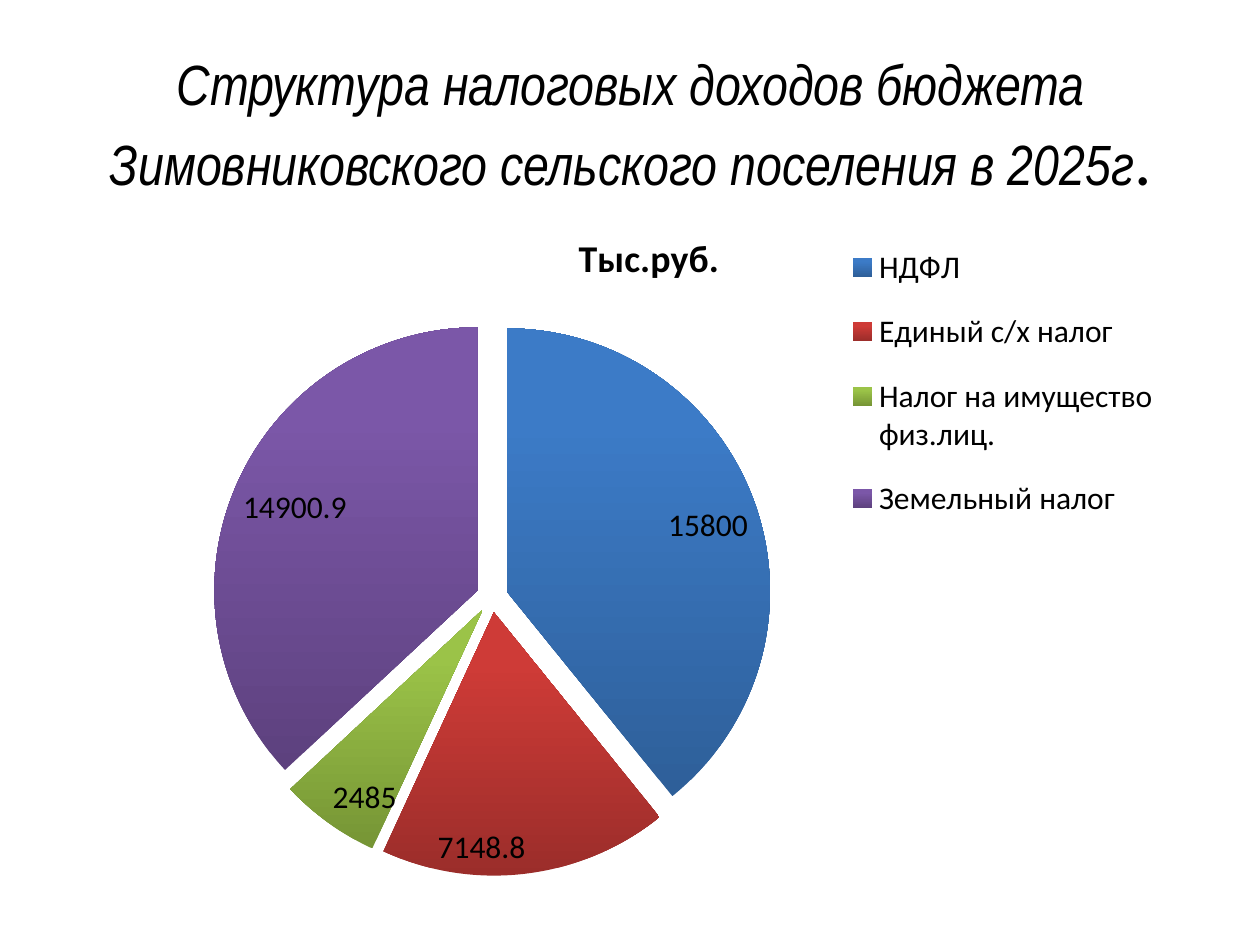
from dataclasses import dataclass

from lxml import etree
from pptx import Presentation
from pptx.chart.chart import Chart
from pptx.chart.data import CategoryChartData
from pptx.dml.color import RGBColor
from pptx.enum.chart import XL_CHART_TYPE, XL_LABEL_POSITION, XL_LEGEND_POSITION
from pptx.enum.text import MSO_ANCHOR, PP_ALIGN
from pptx.oxml.ns import qn
from pptx.util import Emu, Pt

PX = 914400 // 126


@dataclass(frozen=True)
class Theme:
    text: str = "000000"
    heading_font: str = "Arial Narrow"
    body_font: str = "Calibri"
    heading_size: float = 32.4
    full_stop_size: float = 39.6
    chart_title_size: float = 21.6
    chart_size: float = 18


@dataclass(frozen=True)
class Box:
    left: int
    top: int
    width: int
    height: int

    def emu(self) -> tuple[Emu, ...]:
        return tuple(Emu(side * PX) for side in
                     (self.left, self.top, self.width, self.height))


@dataclass(frozen=True)
class Tax:
    name: str
    amount: float
    dark: str
    light: str


THEME = Theme()
HEADING_BOX = Box(64, 45, 1134, 158)
CHART_BOX = Box(74, 204, 1150, 704)
PIE_BOX = Box(213, 318, 558, 558)
LEGEND_BOX = Box(828, 222, 350, 322)
TAXES = [
    Tax("НДФЛ", 15800, "2E5F99", "3C7BC7"),
    Tax("Единый с/х налог", 7148.8, "9B2D2A", "CE3B37"),
    Tax("Налог на имущество физ.лиц.", 2485, "769535", "9BC348"),
    Tax("Земельный налог", 14900.9, "5D417E", "7B57A8"),
]


def format_font(font, *, size: float, name: str = THEME.body_font,
                bold: bool = False, italic: bool = False) -> None:
    font.size, font.name, font.bold, font.italic = Pt(size), name, bold, italic
    font.color.rgb = RGBColor.from_string(THEME.text)


def add_text(paragraph, text: str, **text_format) -> None:
    run = paragraph.add_run()
    run.text = text
    format_font(run.font, **text_format)


def add_heading(slide) -> None:
    frame = slide.shapes.add_textbox(*HEADING_BOX.emu()).text_frame
    frame.word_wrap = True
    frame.vertical_anchor = MSO_ANCHOR.MIDDLE
    paragraph = frame.paragraphs[0]
    paragraph.alignment = PP_ALIGN.CENTER
    add_text(paragraph,
             "Структура налоговых доходов бюджета "
             "Зимовниковского сельского поселения в 2025г",
             size=THEME.heading_size, name=THEME.heading_font, italic=True)
    add_text(paragraph, ".", size=THEME.full_stop_size)


def set_layout(parent, box: Box, target: str = "") -> None:
    """Place a chart part at box, as fractions of the chart area."""
    layout = parent.find(qn("c:layout"))
    if layout is None:
        layout = etree.Element(qn("c:layout"))
        if parent.tag == qn("c:legend"):
            parent.find(qn("c:legendPos")).addnext(layout)
        else:
            parent.insert(0, layout)
    manual = etree.SubElement(layout, qn("c:manualLayout"))
    settings = {"layoutTarget": target} if target else {}
    settings |= {
        "xMode": "edge", "yMode": "edge",
        "x": round((box.left - CHART_BOX.left) / CHART_BOX.width, 4),
        "y": round((box.top - CHART_BOX.top) / CHART_BOX.height, 4),
        "w": round(box.width / CHART_BOX.width, 4),
        "h": round(box.height / CHART_BOX.height, 4),
    }
    for tag, value in settings.items():
        etree.SubElement(manual, qn(f"c:{tag}")).set("val", str(value))


def style_slices(chart: Chart) -> None:
    plot = chart.plots[0]
    plot.vary_by_categories = True
    series = plot.series[0]
    for index, tax in enumerate(TAXES):
        fill = series.points[index].format.fill
        fill.gradient()
        fill.gradient_angle = 90
        for stop, color, position in zip(
                fill.gradient_stops, (tax.dark, tax.light), (0, 0.8)):
            stop.color.rgb = RGBColor.from_string(color)
            stop.position = position
    explosion = etree.Element(qn("c:explosion"), val="6")
    series._element.find(qn("c:dPt")).addprevious(explosion)

    plot.has_data_labels = True
    labels = plot.data_labels
    labels.show_value = True
    labels.show_percentage = False
    labels.number_format = "General"
    labels.number_format_is_linked = False
    labels.position = XL_LABEL_POSITION.INSIDE_END
    format_font(labels.font, size=THEME.chart_size)


def add_tax_chart(slide) -> None:
    data = CategoryChartData()
    data.categories = [tax.name for tax in TAXES]
    data.add_series("Тыс.руб.", [tax.amount for tax in TAXES])
    chart = slide.shapes.add_chart(
        XL_CHART_TYPE.PIE, *CHART_BOX.emu(), data).chart
    format_font(chart.font, size=THEME.chart_size)

    chart.has_title = True
    add_text(chart.chart_title.text_frame.paragraphs[0], "Тыс.руб.",
             size=THEME.chart_title_size, bold=True)
    chart.chart_title.include_in_layout = False

    chart.has_legend = True
    chart.legend.position = XL_LEGEND_POSITION.RIGHT
    chart.legend.include_in_layout = False
    format_font(chart.legend.font, size=THEME.chart_size)
    set_layout(chart.legend._element, LEGEND_BOX)

    style_slices(chart)
    set_layout(chart._chartSpace.chart.plotArea, PIE_BOX, "inner")


def main() -> None:
    presentation = Presentation()
    presentation.slide_width = Emu(1260 * PX)
    presentation.slide_height = Emu(945 * PX)
    slide = presentation.slides.add_slide(presentation.slide_layouts[6])
    add_heading(slide)
    add_tax_chart(slide)
    presentation.save("out.pptx")


if __name__ == "__main__":
    main()
